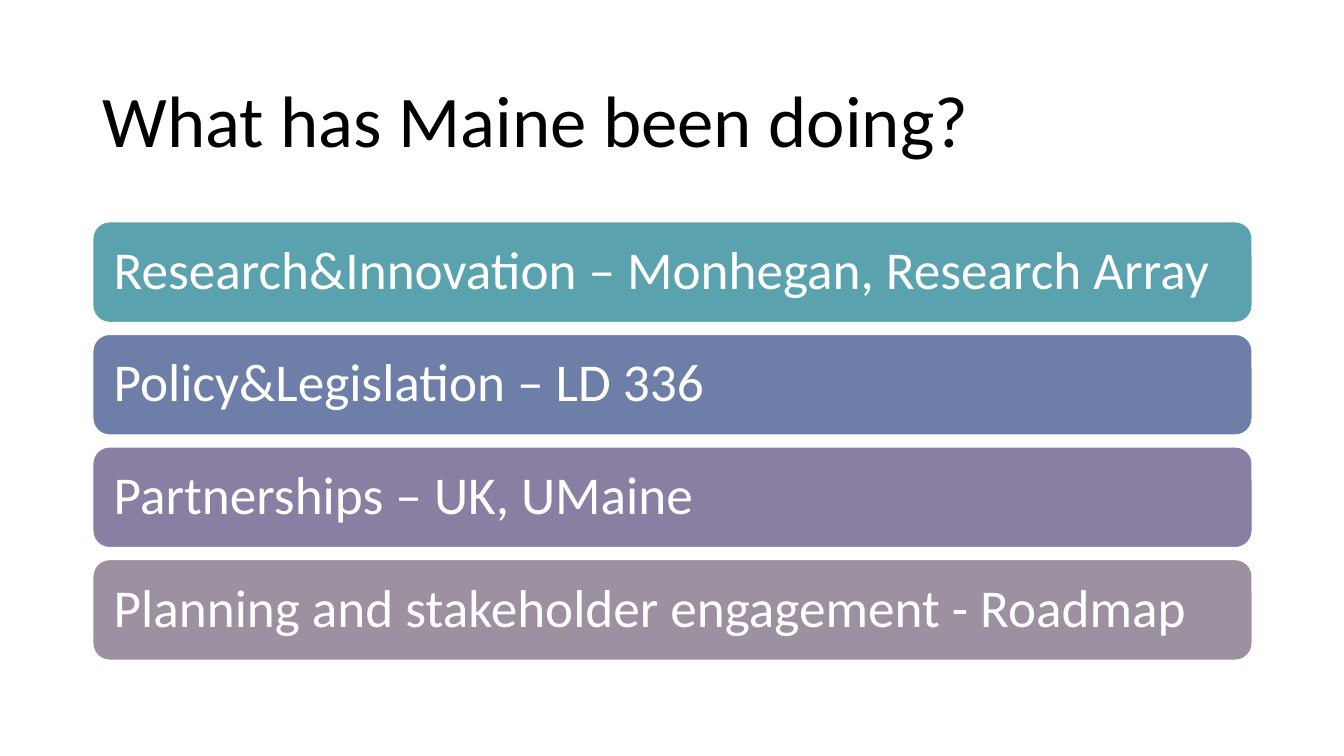
from dataclasses import dataclass

from pptx import Presentation
from pptx.dml.color import RGBColor
from pptx.enum.shapes import MSO_SHAPE
from pptx.enum.text import MSO_ANCHOR, MSO_AUTO_SIZE, PP_ALIGN
from pptx.slide import Slide
from pptx.text.text import TextFrame
from pptx.util import Inches, Pt

BLACK = RGBColor(0x00, 0x00, 0x00)
WHITE = RGBColor(0xFF, 0xFF, 0xFF)
TEAL = RGBColor(0x5A, 0xA2, 0xAE)
BLUE = RGBColor(0x6D, 0x7F, 0xA8)
PURPLE = RGBColor(0x88, 0x7F, 0xA3)
MAUVE = RGBColor(0x9D, 0x90, 0xA0)

LEFT, WIDTH = 0.92, 11.5
FIRST_TOP, BAR_HEIGHT, BAR_PITCH = 2.2, 1.0, 1.117
BAR_INSET = Inches(0.16)


@dataclass(frozen=True)
class Effort:
    text: str
    color: RGBColor


EFFORTS = [
    Effort("Research&Innovation – Monhegan, Research Array", TEAL),
    Effort("Policy&Legislation – LD 336", BLUE),
    Effort("Partnerships – UK, UMaine", PURPLE),
    Effort("Planning and stakeholder engagement - Roadmap", MAUVE),
]


def write_line(frame: TextFrame, text: str, size: int, color: RGBColor) -> None:
    frame.text = text
    frame.word_wrap = True
    frame.auto_size = MSO_AUTO_SIZE.NONE
    frame.vertical_anchor = MSO_ANCHOR.MIDDLE
    paragraph = frame.paragraphs[0]
    paragraph.alignment = PP_ALIGN.LEFT
    paragraph.line_spacing = 0.9
    paragraph.font.name = "Calibri"
    paragraph.font.size = Pt(size)
    paragraph.font.color.rgb = color


def add_title(slide: Slide, text: str) -> None:
    title = slide.shapes.title
    title.left, title.top = Inches(LEFT), Inches(0.61)
    title.width, title.height = Inches(WIDTH), Inches(1.24)
    write_line(title.text_frame, text, 52, BLACK)


def add_effort_bar(slide: Slide, effort: Effort, top: float) -> None:
    bar = slide.shapes.add_shape(
        MSO_SHAPE.ROUNDED_RECTANGLE,
        Inches(LEFT), Inches(top), Inches(WIDTH), Inches(BAR_HEIGHT),
    )
    bar.shadow.inherit = False
    bar.fill.solid()
    bar.fill.fore_color.rgb = effort.color
    bar.line.color.rgb = WHITE
    bar.line.width = Pt(1)
    frame = bar.text_frame
    frame.margin_left = frame.margin_right = BAR_INSET
    frame.margin_top = frame.margin_bottom = BAR_INSET
    write_line(frame, effort.text, 38, WHITE)


def main() -> None:
    presentation = Presentation()
    presentation.slide_width = Inches(13.33)
    presentation.slide_height = Inches(7.5)
    title_only = presentation.slide_layouts.get_by_name("Title Only")
    slide = presentation.slides.add_slide(title_only)
    add_title(slide, "What has Maine been doing?")
    for row, effort in enumerate(EFFORTS):
        add_effort_bar(slide, effort, FIRST_TOP + row * BAR_PITCH)
    presentation.save("out.pptx")


if __name__ == "__main__":
    main()
